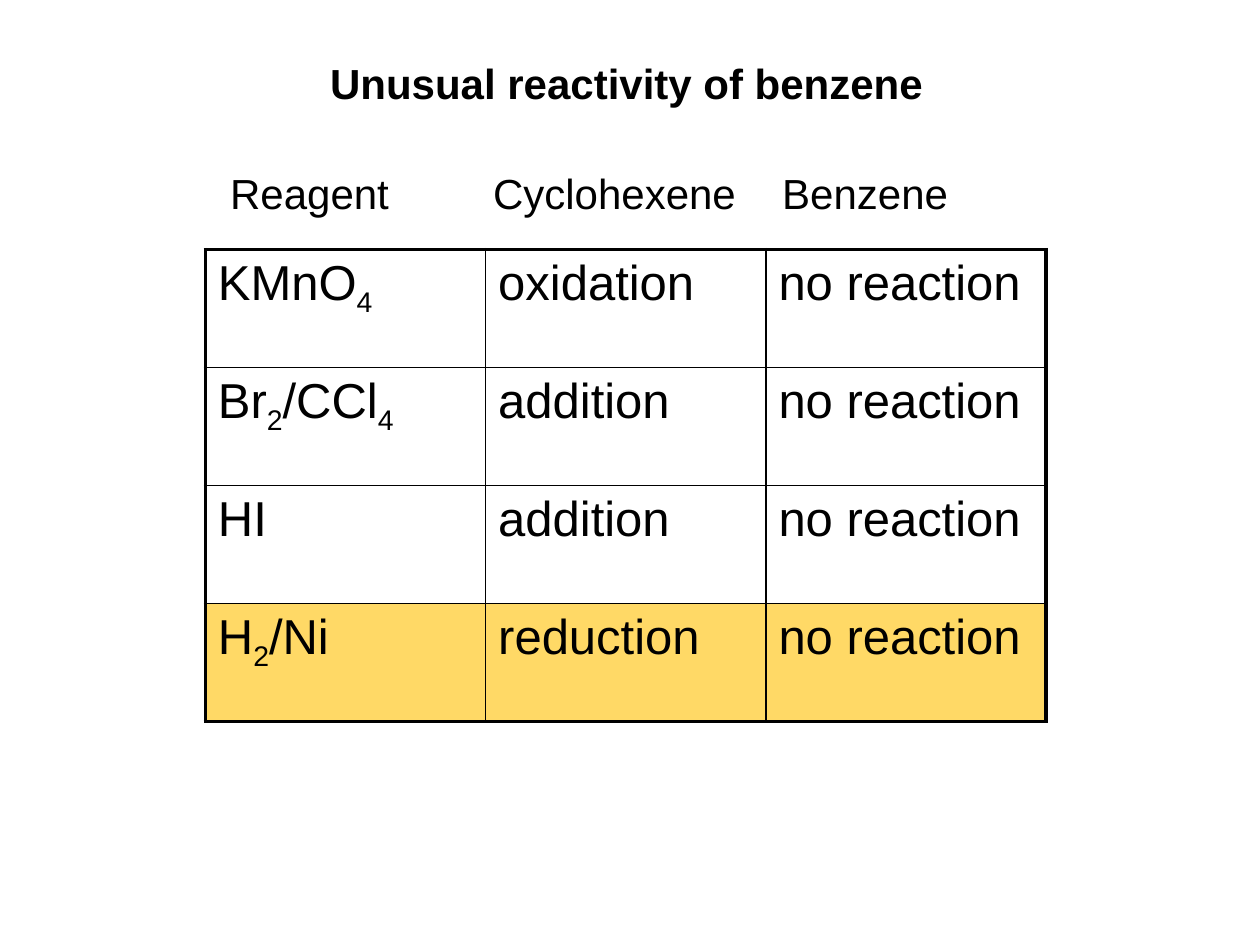
from dataclasses import dataclass
from itertools import groupby

from lxml.etree import SubElement
from pptx import Presentation
from pptx.dml.color import RGBColor
from pptx.enum.text import MSO_ANCHOR, MSO_AUTO_SIZE, PP_ALIGN
from pptx.oxml.ns import qn
from pptx.util import Cm, Pt


@dataclass(frozen=True)
class Theme:
    font: str = "Arial"
    ink: RGBColor = RGBColor(0, 0, 0)
    highlight: RGBColor = RGBColor(0xFF, 0xD9, 0x66)
    heading_size: Pt = Pt(24)
    cell_size: Pt = Pt(28)
    outer_line: Pt = Pt(2.25)
    inner_line: Pt = Pt(1)


THEME = Theme()
REACTIONS = [
    ("KMnO4", "oxidation", "no reaction"),
    ("Br2/CCl4", "addition", "no reaction"),
    ("HI", "addition", "no reaction"),
    ("H2/Ni", "reduction", "no reaction"),
]
HIGHLIGHT_ROW = 3


def write(para, text, size, bold=False):
    """Write text in the theme font, with every digit as a subscript."""
    for is_digit, letters in groupby(text, str.isdigit):
        span = para.add_run()
        span.text = "".join(letters)
        span.font.name = THEME.font
        span.font.size = size
        span.font.bold = bold
        span.font.color.rgb = THEME.ink
        if is_digit:
            span.font._element.set("baseline", "-25000")


def add_title(page, left, top, width, height):
    title = page.shapes.title
    title.left, title.top, title.width, title.height = left, top, width, height
    frame = title.text_frame
    frame.auto_size = MSO_AUTO_SIZE.NONE
    frame.vertical_anchor = MSO_ANCHOR.TOP
    para = frame.paragraphs[0]
    para.alignment = PP_ALIGN.LEFT
    write(para, "Unusual reactivity of benzene", THEME.heading_size, bold=True)


def add_column_headings(page, left, top, width, height):
    box = page.shapes.add_textbox(left, top, width, height)
    box.text_frame.word_wrap = True
    para = box.text_frame.paragraphs[0]
    tabs = SubElement(para._p.get_or_add_pPr(), qn("a:tabLst"))
    for position in (Cm(5.3), Cm(11.13)):
        SubElement(tabs, qn("a:tab"), pos=str(position), algn="l")
    write(para, "Reagent\tCyclohexene\tBenzene", THEME.heading_size)


def set_borders(cell, outer_sides):
    properties = cell._tc.get_or_add_tcPr()
    for index, side in enumerate("LRTB"):
        width = THEME.outer_line if side in outer_sides else THEME.inner_line
        line = SubElement(properties, qn(f"a:ln{side}"), w=str(width))
        fill = SubElement(line, qn("a:solidFill"))
        SubElement(fill, qn("a:srgbClr"), val=str(THEME.ink))
        properties.insert(index, line)


def add_reaction_table(page, left, top, width, height):
    rows, columns = len(REACTIONS), len(REACTIONS[0])
    table = page.shapes.add_table(rows, columns, left, top, width, height).table
    table.first_row = False
    table.horz_banding = False
    for row, reaction in enumerate(REACTIONS):
        for column, text in enumerate(reaction):
            cell = table.cell(row, column)
            write(cell.text_frame.paragraphs[0], text, THEME.cell_size)
            if row == HIGHLIGHT_ROW:
                cell.fill.solid()
                cell.fill.fore_color.rgb = THEME.highlight
            else:
                cell.fill.background()
            edges = {"L": column == 0, "R": column == columns - 1,
                     "T": row == 0, "B": row == rows - 1}
            set_borders(cell, [side for side, outer in edges.items() if outer])


def main():
    deck = Presentation()
    deck.slide_width, deck.slide_height = Cm(25.4), Cm(19.05)
    page = deck.slides.add_slide(deck.slide_layouts.get_by_name("Title Only"))
    add_title(page, Cm(6.4), Cm(1.04), Cm(12.6), Cm(1.27))
    add_column_headings(page, Cm(4.39), Cm(3.25), Cm(16.4), Cm(1.27))
    add_reaction_table(page, Cm(4.14), Cm(5.03), Cm(16.95), Cm(9.52))
    deck.save("out.pptx")


if __name__ == "__main__":
    main()
